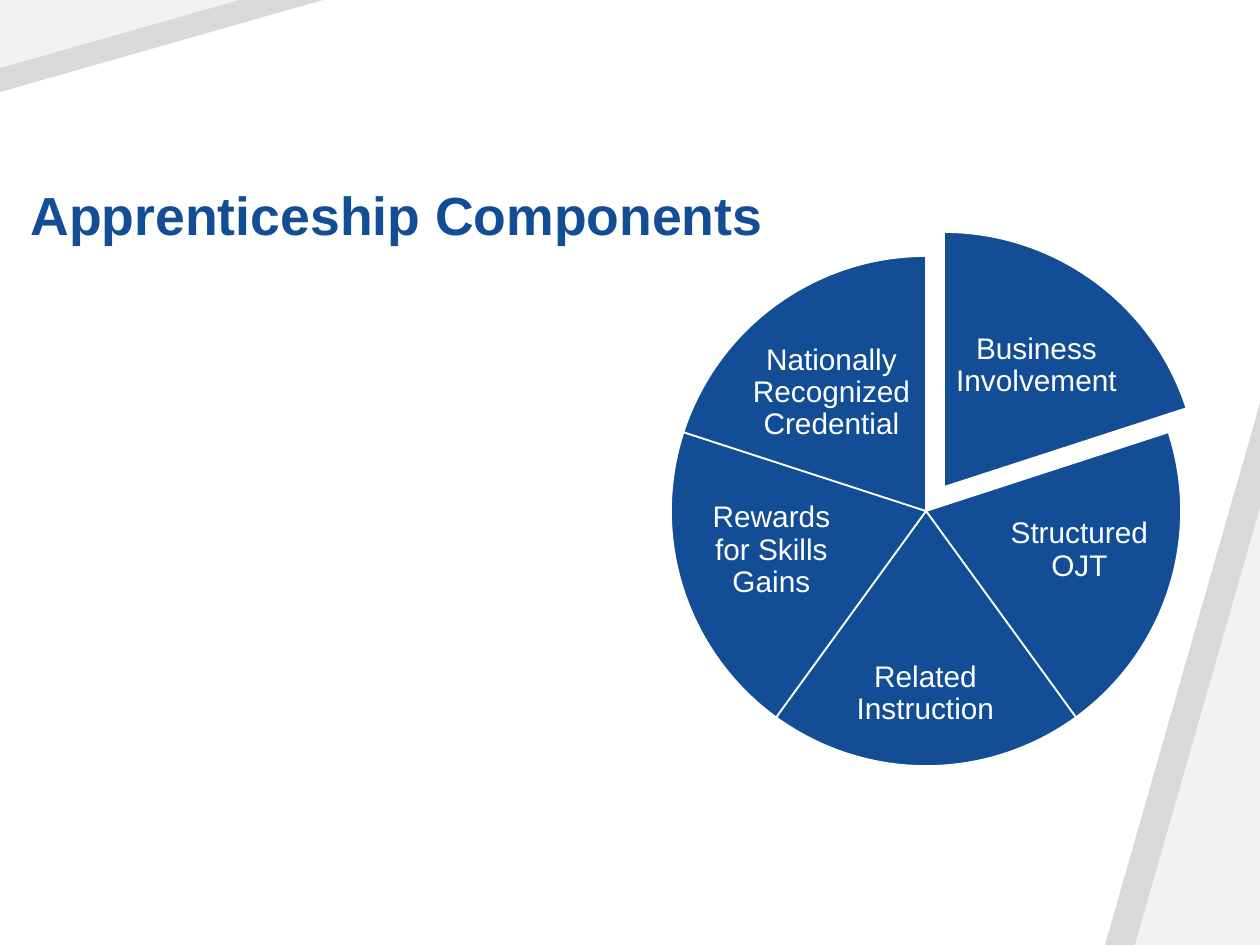
from pptx import Presentation
from pptx.dml.color import RGBColor
from pptx.enum.shapes import MSO_SHAPE
from pptx.enum.text import MSO_ANCHOR, MSO_AUTO_SIZE, PP_ALIGN
from pptx.util import Pt

PX = 914400 / 126
BLUE = RGBColor(0x12, 0x4D, 0x95)
WHITE = RGBColor(0xFF, 0xFF, 0xFF)
GRAY = RGBColor(0xD9, 0xD9, 0xD9)
PALE = RGBColor(0xF2, 0xF2, 0xF2)

TITLE = "Apprenticeship Components"
TITLE_BOX = (18, 214, 855, 39)
# Corner triangles: left, top, width, height, rotation, colour
CORNERS = [
    (1105, 403, 155, 542, 0, GRAY),
    (1135, 508, 125, 437, 0, PALE),
    (0, 0, 323, 92, 180, GRAY),
    (0, 0, 239, 68, 180, PALE),
]
# Components, clockwise from the top: label, label box, offset from the pie
COMPONENTS = [
    ("Business Involvement", (950, 307, 173, 118), (18, -24)),
    ("Structured OJT", (1004, 486, 151, 129), (0, 0)),
    ("Related Instruction", (834, 639, 183, 110), (0, 0)),
    ("Rewards for Skills Gains", (696, 486, 151, 129), (0, 0)),
    ("Nationally Recognized Credential", (745, 334, 173, 118), (0, 0)),
]
PIE_LEFT, PIE_TOP, PIE_SIZE = 671, 256, 510
START_ANGLE = 270
ADJUSTMENT_PER_DEGREE = 0.6

TITLE_FONT = {"name": "Arial", "size": Pt(30.6), "bold": True}
LABEL_FONT = {"name": "Arial", "size": Pt(17)}
LABEL_FRAME = {"word_wrap": True, "vertical_anchor": MSO_ANCHOR.MIDDLE,
               **{f"margin_{side}": round(3 * PX)
                  for side in ("left", "top", "right", "bottom")}}
TITLE_FRAME = {"word_wrap": True, "vertical_anchor": MSO_ANCHOR.BOTTOM,
               "auto_size": MSO_AUTO_SIZE.NONE}


def emu(*lengths):
    return [round(length * PX) for length in lengths]


def set_all(target, values):
    for name, value in values.items():
        setattr(target, name, value)


def write(frame, text, frame_format, font_format, color, align):
    frame.text = text
    set_all(frame, frame_format)
    paragraph = frame.paragraphs[0]
    set_all(paragraph, {"alignment": align, "line_spacing": 0.9})
    font = paragraph.runs[0].font
    set_all(font, font_format)
    font.color.rgb = color


def add_filled(slide, preset, box, color):
    shape = slide.shapes.add_shape(preset, *emu(*box))
    shape.shadow.inherit = False
    shape.fill.solid()
    shape.fill.fore_color.rgb = color
    return shape


def add_corners(slide):
    for *box, rotation, color in CORNERS:
        corner = add_filled(slide, MSO_SHAPE.ISOSCELES_TRIANGLE, box, color)
        corner.adjustments[0] = 1
        corner.rotation = rotation
        corner.line.fill.background()


def add_title(slide):
    title = slide.shapes.title
    title.left, title.top, title.width, title.height = emu(*TITLE_BOX)
    write(title.text_frame, TITLE, TITLE_FRAME, TITLE_FONT, BLUE, PP_ALIGN.LEFT)


def add_components(slide):
    sweep = 360 / len(COMPONENTS)
    for index, (label, label_box, (dx, dy)) in enumerate(COMPONENTS):
        box = (PIE_LEFT + dx, PIE_TOP + dy, PIE_SIZE, PIE_SIZE)
        wedge = add_filled(slide, MSO_SHAPE.PIE, box, BLUE)
        for side in (0, 1):
            angle = (START_ANGLE + (index + side) * sweep) % 360
            wedge.adjustments[side] = round(angle * ADJUSTMENT_PER_DEGREE, 2)
        wedge.line.color.rgb = WHITE
        wedge.line.width = Pt(1)
        caption = slide.shapes.add_textbox(*emu(*label_box))
        write(caption.text_frame, label, LABEL_FRAME, LABEL_FONT, WHITE,
              PP_ALIGN.CENTER)


def main():
    deck = Presentation()
    deck.slide_width, deck.slide_height = emu(1260, 945)
    slide = deck.slides.add_slide(deck.slide_layouts[5])
    add_corners(slide)
    add_title(slide)
    add_components(slide)
    deck.save("out.pptx")


if __name__ == "__main__":
    main()
